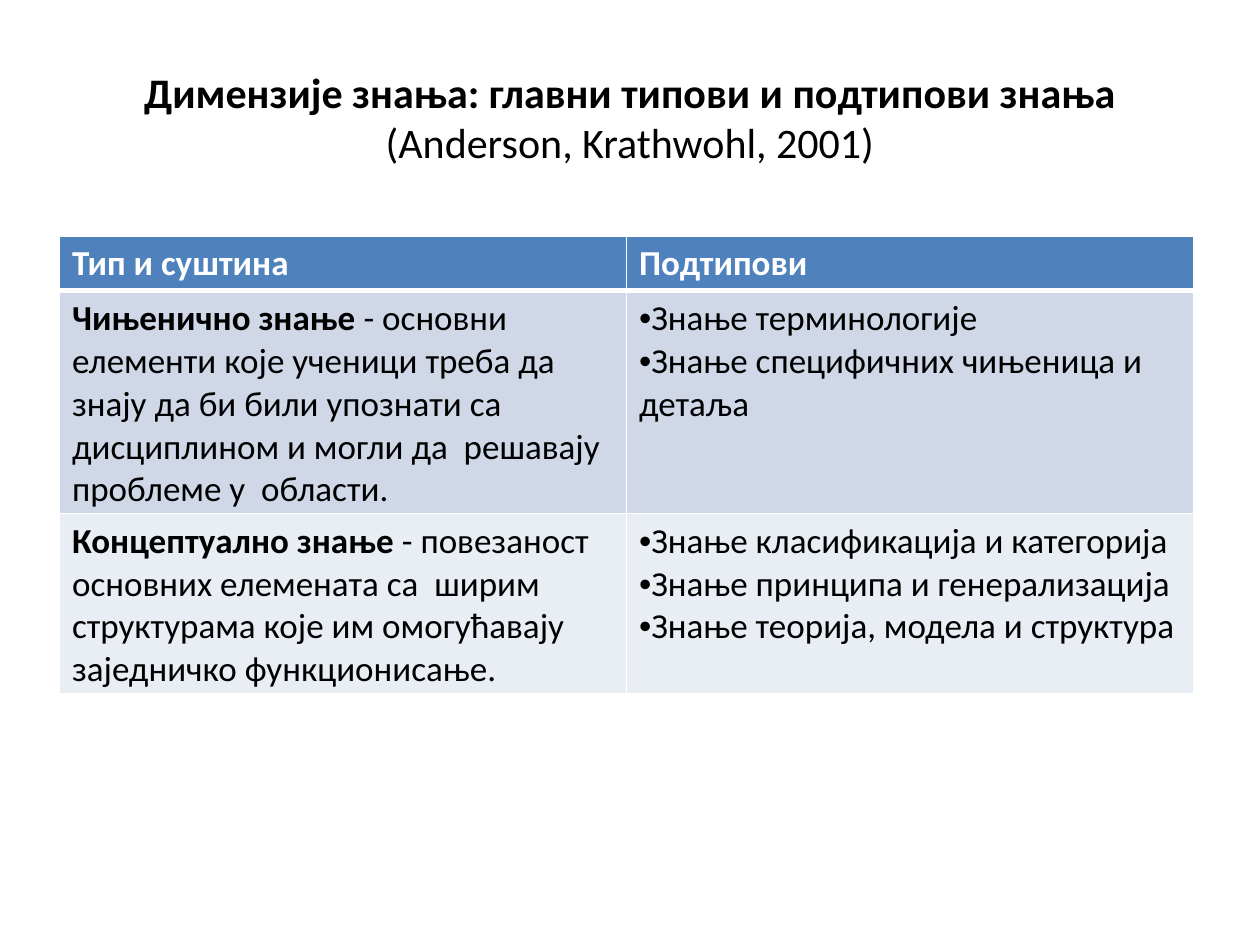
from dataclasses import dataclass

import pptx
import pptx.dml.color
import pptx.enum.text
import pptx.oxml.ns
import pptx.util
from lxml import etree

FONT = "Calibri"
BLACK, WHITE = "000000", "FFFFFF"
HEADER_SIZES = {"lnL": 1, "lnR": 1, "lnT": 1, "lnB": 3}
FIRST_ROW_SIZES = {"lnL": 1, "lnR": 1, "lnT": 3, "lnB": 1}
BODY_SIZES = {"lnL": 1, "lnR": 1, "lnT": 1, "lnB": 1}


@dataclass
class KnowledgeRow:
    height: float
    fill: str
    borders: dict[str, float]
    kind: str
    essence: str
    subtypes: list[str]


ROWS = [
    KnowledgeRow(27.4, "4F81BD", HEADER_SIZES, "Тип и суштина", "", ["Подтипови"]),
    KnowledgeRow(
        87.1, "D0D8E8", FIRST_ROW_SIZES, "Чињенично знање ",
        "- основни елементи које ученици треба да знају да би били упознати са "
        "дисциплином и могли да  решавају проблеме у  области.",
        ["Знање терминологије", "Знање специфичних чињеница и детаља"]),
    KnowledgeRow(
        87.1, "E9EDF4", BODY_SIZES, "Концептуално знање",
        " - повезаност основних елемената са  ширим структурама које им "
        "омогућавају заједничко функционисање.",
        ["Знање класификација и категорија", "Знање принципа и генерализација",
         "Знање теорија, модела и структура"]),
]


def color(value: str) -> pptx.dml.color.RGBColor:
    return pptx.dml.color.RGBColor.from_string(value)


def add_text(paragraph, text: str, *, size: float = 20, bold: bool = False,
             fill: str = BLACK) -> None:
    run = paragraph.add_run()
    run.text = text
    run.font.name = FONT
    run.font.size = pptx.util.Pt(size)
    run.font.bold = bold
    run.font.color.rgb = color(fill)


def add_bullet(paragraph) -> None:
    properties = paragraph._p.get_or_add_pPr()
    properties.set("marL", "0")
    properties.set("indent", "0")
    font = etree.SubElement(properties, pptx.oxml.ns.qn("a:buFont"))
    font.set("typeface", "Arial")
    bullet = etree.SubElement(properties, pptx.oxml.ns.qn("a:buChar"))
    bullet.set("char", "•")


def style_cell(cell, row: KnowledgeRow) -> None:
    properties = cell._tc.get_or_add_tcPr()
    for side, width in row.borders.items():
        line = etree.SubElement(properties, pptx.oxml.ns.qn(f"a:{side}"))
        line.set("w", str(int(pptx.util.Pt(width))))
        solid = etree.SubElement(line, pptx.oxml.ns.qn("a:solidFill"))
        etree.SubElement(solid, pptx.oxml.ns.qn("a:srgbClr")).set("val", WHITE)
    cell.fill.solid()
    cell.fill.fore_color.rgb = color(row.fill)


def add_title(slide) -> None:
    title = slide.shapes.add_textbox(*map(pptx.util.Pt, (36, 21.6, 648, 90)))
    frame = title.text_frame
    frame.word_wrap = True
    frame.vertical_anchor = pptx.enum.text.MSO_ANCHOR.MIDDLE
    paragraph = frame.paragraphs[0]
    paragraph.alignment = pptx.enum.text.PP_ALIGN.CENTER
    add_text(paragraph, "Димензије знања: главни типови и подтипови знања ",
             size=24, bold=True)
    add_text(paragraph, "(Anderson, Krathwohl, 2001)", size=24)


def add_knowledge_table(slide, rows: list[KnowledgeRow]) -> None:
    graphic_frame = slide.shapes.add_table(
        len(rows), 2, *map(pptx.util.Pt, (34, 134.9, 648, 261.4)))
    table = graphic_frame.table
    table.horz_banding = False
    for index, row in enumerate(rows):
        header = index == 0
        fill = WHITE if header else BLACK
        table.rows[index].height = pptx.util.Pt(row.height)
        type_cell, subtype_cell = table.cell(index, 0), table.cell(index, 1)
        style_cell(type_cell, row)
        style_cell(subtype_cell, row)

        # Type in bold, followed by its essence
        paragraph = type_cell.text_frame.paragraphs[0]
        add_text(paragraph, row.kind, bold=True, fill=fill)
        if row.essence:
            add_text(paragraph, row.essence, fill=fill)

        # Subtypes, one paragraph each
        frame = subtype_cell.text_frame
        for number, subtype in enumerate(row.subtypes):
            paragraph = frame.add_paragraph() if number else frame.paragraphs[0]
            if not header:
                add_bullet(paragraph)
            add_text(paragraph, subtype, bold=header, fill=fill)
    graphic_frame.height = pptx.util.Pt(261.4)


def main() -> None:
    presentation = pptx.Presentation()
    presentation.slide_width = pptx.util.Pt(720)
    presentation.slide_height = pptx.util.Pt(540)
    slide = presentation.slides.add_slide(presentation.slide_layouts[6])
    slide.background.fill.solid()
    slide.background.fill.fore_color.rgb = color(WHITE)
    add_title(slide)
    add_knowledge_table(slide, ROWS)
    presentation.save("out.pptx")


if __name__ == "__main__":
    main()
